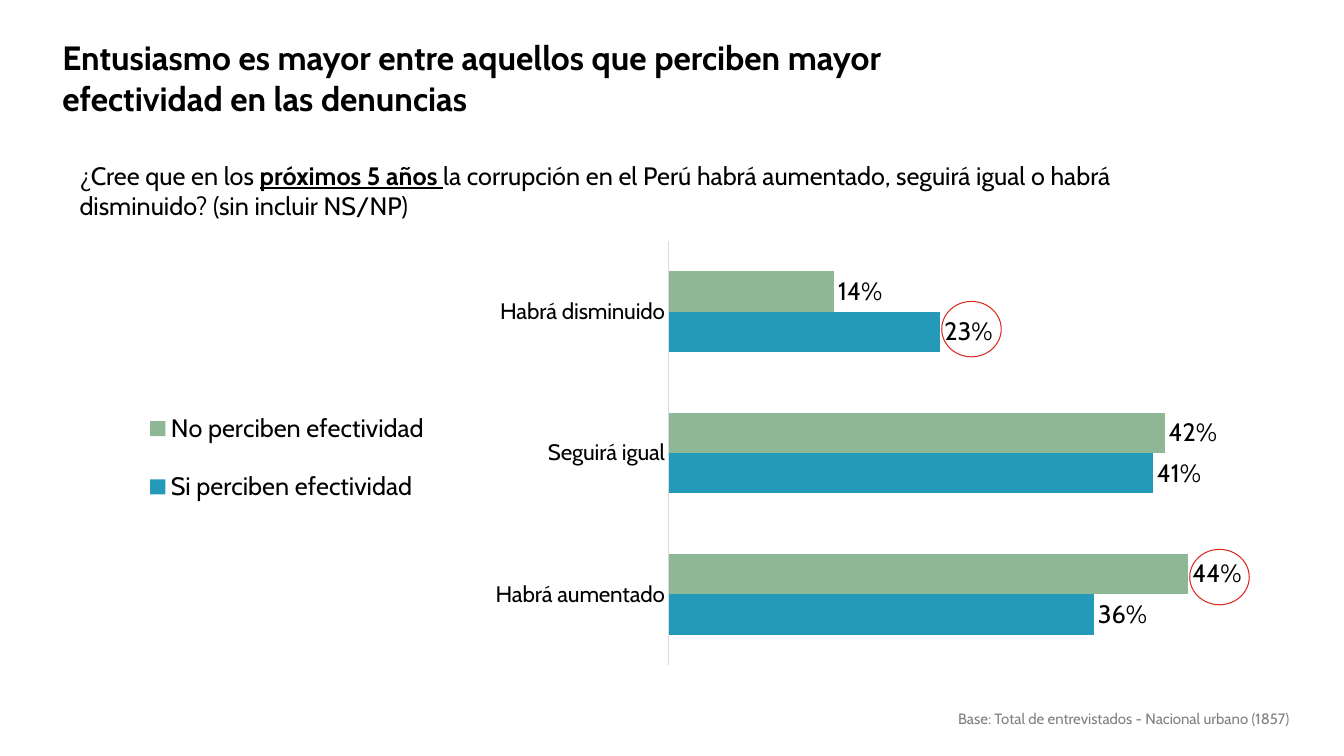
from dataclasses import dataclass

from lxml import etree
from pptx import Presentation
from pptx import util as u
from pptx.chart.data import CategoryChartData
from pptx.dml.color import RGBColor
from pptx.enum import chart as ch, shapes, text
from pptx.oxml.ns import qn


@dataclass(frozen=True)
class Theme:
    font: str = "Cabin"
    ink: str = "000000"
    muted: str = "808080"
    axis: str = "D9D9D9"
    accent: str = "DC291E"
    yes: str = "2599B8"
    no: str = "8DB795"
    title: float = 24
    body: float = 18
    label: float = 16
    note: float = 10.7
    hairline: float = 0.75


class SlideBuilder:
    def __init__(self, prs, theme):
        self.theme = theme
        self.s = prs.slides.add_slide(prs.slide_layouts[6])

    def style(self, font, size, color=None, bold=False, underline=False):
        font.name = self.theme.font
        font.size = u.Pt(size)
        font.bold = bold
        font.underline = underline
        font.color.rgb = RGBColor.from_string(color or self.theme.ink)

    def text(self, box, runs, size, color=None, align=text.PP_ALIGN.LEFT,
             spacing=None, grow=False):
        sp = self.s.shapes.add_textbox(*map(u.Inches, box))
        tf = sp.text_frame
        tf.word_wrap = True
        if grow:
            tf.auto_size = text.MSO_AUTO_SIZE.SHAPE_TO_FIT_TEXT
        p = tf.paragraphs[0]
        p.alignment = align
        if spacing:
            p.line_spacing = spacing
        for content, emphasis in runs:
            r = p.add_run()
            r.text = content
            self.style(r.font, size, color, emphasis == "bold" or emphasis == "key",
                       emphasis == "key")

    def ring(self, left, top):
        sp = self.s.shapes.add_shape(shapes.MSO_SHAPE.OVAL, u.Inches(left),
                                     u.Inches(top), u.Inches(0.59), u.Inches(0.55))
        sp.shadow.inherit = False
        sp.fill.background()
        sp.line.color.rgb = RGBColor.from_string(self.theme.accent)
        sp.line.width = u.Pt(self.theme.hairline)

    def layout(self, parent, index, box, inner=False):
        for old in parent.findall(qn("c:layout")):
            parent.remove(old)
        layout = etree.Element(qn("c:layout"))
        manual = etree.SubElement(layout, qn("c:manualLayout"))
        values = [("xMode", "edge"), ("yMode", "edge"), *zip("xywh", box)]
        if inner:
            values.insert(0, ("layoutTarget", "inner"))
        for tag, value in values:
            etree.SubElement(manual, qn(f"c:{tag}")).set("val", str(value))
        parent.insert(index, layout)

    def bar_chart(self, box, categories, series, plot_box, legend_box, maximum):
        th = self.theme
        data = CategoryChartData(number_format="0%")
        data.categories = categories
        for name, values, _ in series:
            data.add_series(name, values)
        chart = self.s.shapes.add_chart(ch.XL_CHART_TYPE.BAR_CLUSTERED,
                                        *map(u.Inches, box), data).chart
        self.style(chart.font, th.label)
        chart.has_title = False

        plot = chart.plots[0]
        plot.vary_by_categories = False
        plot.gap_width = 150
        plot.overlap = 0
        for bars, (_, _, color) in zip(plot.series, series):
            bars.format.fill.solid()
            bars.format.fill.fore_color.rgb = RGBColor.from_string(color)
            labels = bars.data_labels
            labels.show_value = True
            labels.number_format = "0%"
            labels.number_format_is_linked = False
            labels.position = ch.XL_LABEL_POSITION.OUTSIDE_END
            self.style(labels.font, th.body)

        for axis in (chart.category_axis, chart.value_axis):
            axis.major_tick_mark = axis.minor_tick_mark = ch.XL_TICK_MARK.NONE
            axis.has_major_gridlines = False
            self.style(axis.tick_labels.font, th.label)
        line = chart.category_axis.format.line
        line.color.rgb = RGBColor.from_string(th.axis)
        line.width = u.Pt(th.hairline)
        value_axis = chart.value_axis
        value_axis.minimum_scale = 0
        value_axis.maximum_scale = maximum
        value_axis.tick_label_position = ch.XL_TICK_LABEL_POSITION.NONE
        value_axis.format.line.fill.background()

        chart.has_legend = True
        legend = chart.legend
        legend.position = ch.XL_LEGEND_POSITION.LEFT
        legend.include_in_layout = False
        self.style(legend.font, th.body)
        root = chart.element
        self.layout(root.find(".//" + qn("c:plotArea")), 0, plot_box, inner=True)
        self.layout(root.find(".//" + qn("c:legend")), 1, legend_box)


def main():
    prs = Presentation()
    prs.slide_width = u.Inches(13.33)
    prs.slide_height = u.Inches(7.5)
    th = Theme()
    slide = SlideBuilder(prs, th)

    slide.text((5.94, 7.01, 6.95, 0.26),
               [("Base: Total de entrevistados - Nacional urbano (1857)", "")],
               th.note, th.muted, text.PP_ALIGN.RIGHT, 0.9, grow=True)
    slide.text((0.52, 0.32, 9.14, 0.99),
               [("Entusiasmo es mayor entre aquellos que perciben mayor "
                 "efectividad en las denuncias", "bold")], th.title)
    slide.text((0.69, 1.54, 11.28, 0.71),
               [("¿Cree que en los ", ""),
                ("próximos 5 años ", "key"),
                ("la corrupción en el Perú habrá aumentado, seguirá igual o "
                 "habrá disminuido? (sin incluir NS/NP)", "")],
               th.body, grow=True)
    slide.bar_chart(
        (1.01, 2.2, 11.48, 4.78),
        ["Habrá aumentado", "Seguirá igual", "Habrá disminuido"],
        [("Si perciben efectividad", (0.36, 0.41, 0.23), th.yes),
         ("No perciben efectividad", (0.44, 0.42, 0.14), th.no)],
        plot_box=(0.49, 0.04, 0.51, 0.88),
        legend_box=(0.03, 0.34, 0.26, 0.3),
        maximum=0.5)
    for left, top in ((11.8, 5.45), (9.34, 2.99)):
        slide.ring(left, top)

    prs.save("out.pptx")


if __name__ == "__main__":
    main()
